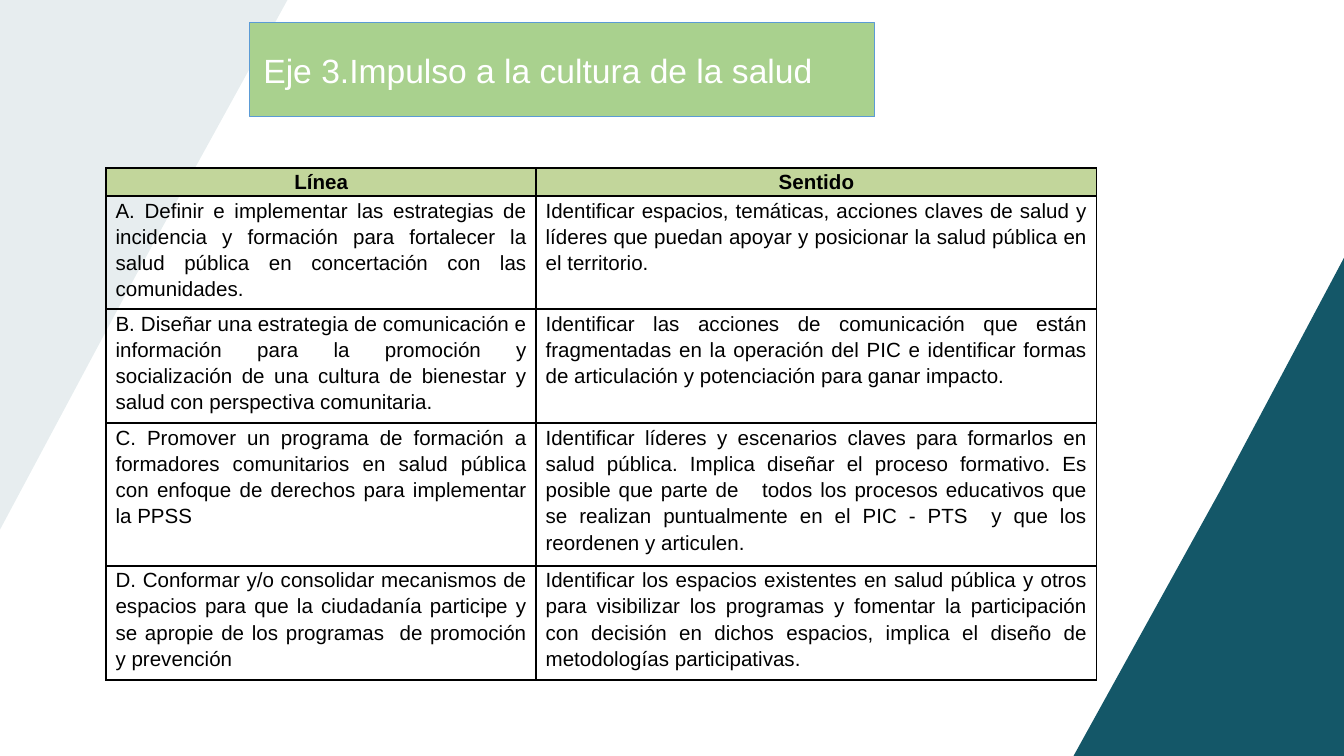
from lxml.etree import SubElement
from pptx import Presentation
from pptx.dml.color import RGBColor
from pptx.enum.text import MSO_ANCHOR as Anchor, PP_ALIGN as Align
from pptx.oxml.ns import qn
from pptx.util import Inches, Pt

ROWS = [
    ("Línea", "Sentido"),
    ("A. Definir e implementar las estrategias de incidencia y formación para "
     "fortalecer la salud pública en concertación con las comunidades.",
     "Identificar espacios, temáticas, acciones claves de salud y líderes que "
     "puedan apoyar y posicionar la salud pública en el territorio."),
    ("B. Diseñar una estrategia de comunicación e información para la promoción "
     "y socialización de una cultura de bienestar y salud con perspectiva "
     "comunitaria.",
     "Identificar las acciones de comunicación que están fragmentadas en la "
     "operación del PIC e identificar formas de articulación y potenciación "
     "para ganar impacto."),
    ("C. Promover un programa de formación a formadores comunitarios en salud "
     "pública con enfoque de derechos para implementar la PPSS",
     "Identificar líderes y escenarios claves para formarlos en salud pública. "
     "Implica diseñar el proceso formativo. Es posible que parte de   todos los "
     "procesos educativos que se realizan puntualmente en el PIC - PTS  y que "
     "los reordenen y articulen."),
    ("D. Conformar y/o consolidar mecanismos de espacios para que la ciudadanía "
     "participe y se apropie de los programas  de promoción y prevención",
     "Identificar los espacios existentes en salud pública y otros para "
     "visibilizar los programas y fomentar la participación con decisión en "
     "dichos espacios, implica el diseño de metodologías participativas."),
]
WIDTHS = [3.2, 4.17]
HEIGHTS = [0.21, 0.84, 0.85, 1.06, 0.85]


def color(text):
    return RGBColor.from_string(text)


class Deck:
    """Holds the style and the current slide."""

    face = "Arial"
    teal = "145768"
    green = "A9D18E"
    head = "C2D69B"
    blue = "5B9BD5"
    ink = "000000"
    white = "FFFFFF"

    def __init__(self):
        self.prs = Presentation()
        self.prs.slide_width = Inches(10)
        self.prs.slide_height = Inches(10 * 9 / 16)
        self.slide = self.prs.slides.add_slide(self.prs.slide_layouts[5])

    def font(self, para, size, tone, bold=False):
        para.font.name, para.font.size = self.face, Pt(size)
        para.font.bold, para.font.color.rgb = bold, color(tone)

    def wedge(self, points, alpha=100):
        start, *rest = [(Inches(x), Inches(y)) for x, y in points]
        pen = self.slide.shapes.build_freeform(*start)
        pen.add_line_segments(rest)
        shape = pen.convert_to_shape()
        shape.shadow.inherit = False
        shape.line.fill.background()
        shape.fill.solid()
        shape.fill.fore_color.rgb = color(self.teal)
        if alpha < 100:
            tint = shape.element.spPr.find(qn("a:solidFill"))[0]
            SubElement(tint, qn("a:alpha"), val=str(alpha * 1000))

    def title(self, text, left, top, width, height):
        box = self.slide.shapes.title
        box.left, box.top = Inches(left), Inches(top)
        box.width, box.height = Inches(width), Inches(height)
        box.fill.solid()
        box.fill.fore_color.rgb = color(self.green)
        box.line.color.rgb, box.line.width = color(self.blue), Pt(0.5)
        frame = box.text_frame
        frame.text, frame.word_wrap = text, True
        frame.vertical_anchor = Anchor.MIDDLE
        para = frame.paragraphs[0]
        para.alignment = Align.LEFT
        self.font(para, 18, self.white)
        self.slide.shapes.element.append(box.element)

    def border(self, cell):
        props = cell._tc.get_or_add_tcPr()
        for i, side in enumerate(("lnL", "lnR", "lnT", "lnB")):
            line = props.makeelement(qn(f"a:{side}"), {"w": str(Pt(1))})
            fill = SubElement(line, qn("a:solidFill"))
            SubElement(fill, qn("a:srgbClr"), val=self.ink)
            props.insert(i, line)

    def cell(self, cell, text, top):
        cell.margin_left = cell.margin_right = Inches(0.07)
        cell.margin_top = cell.margin_bottom = 0
        if top:
            cell.fill.solid()
            cell.fill.fore_color.rgb = color(self.head)
        else:
            cell.fill.background()
        self.border(cell)
        cell.text = text
        para = cell.text_frame.paragraphs[0]
        para.alignment = Align.CENTER if top else Align.JUSTIFY
        para.line_spacing, para.space_after = 1.15, Pt(10)
        self.font(para, 11, self.ink, top)

    def table(self, rows, left, top, widths, heights):
        grid = self.slide.shapes.add_table(
            len(rows), len(widths), Inches(left), Inches(top),
            Inches(sum(widths)), Inches(sum(heights))).table
        grid.first_row = grid.horz_banding = False
        for col, width in zip(grid.columns, widths):
            col.width = Inches(width)
        for row, height in zip(grid.rows, heights):
            row.height = Inches(height)
        for r, texts in enumerate(rows):
            for c, text in enumerate(texts):
                self.cell(grid.cell(r, c), text, r == 0)


def main():
    deck = Deck()
    deck.wedge([(10.09, 1.75), (10.08, 5.72), (7.93, 5.73), (9.08, 3.65)])
    deck.wedge([(-0.01, 3.96), (0, -0.01), (2.15, -0.02), (1, 2.07)], 10)
    deck.title("Eje 3.Impulso a la cultura de la salud", 1.86, 0.17, 4.65, 0.7)
    deck.table(ROWS, 0.79, 1.25, WIDTHS, HEIGHTS)
    deck.prs.save("out.pptx")


if __name__ == "__main__":
    main()
